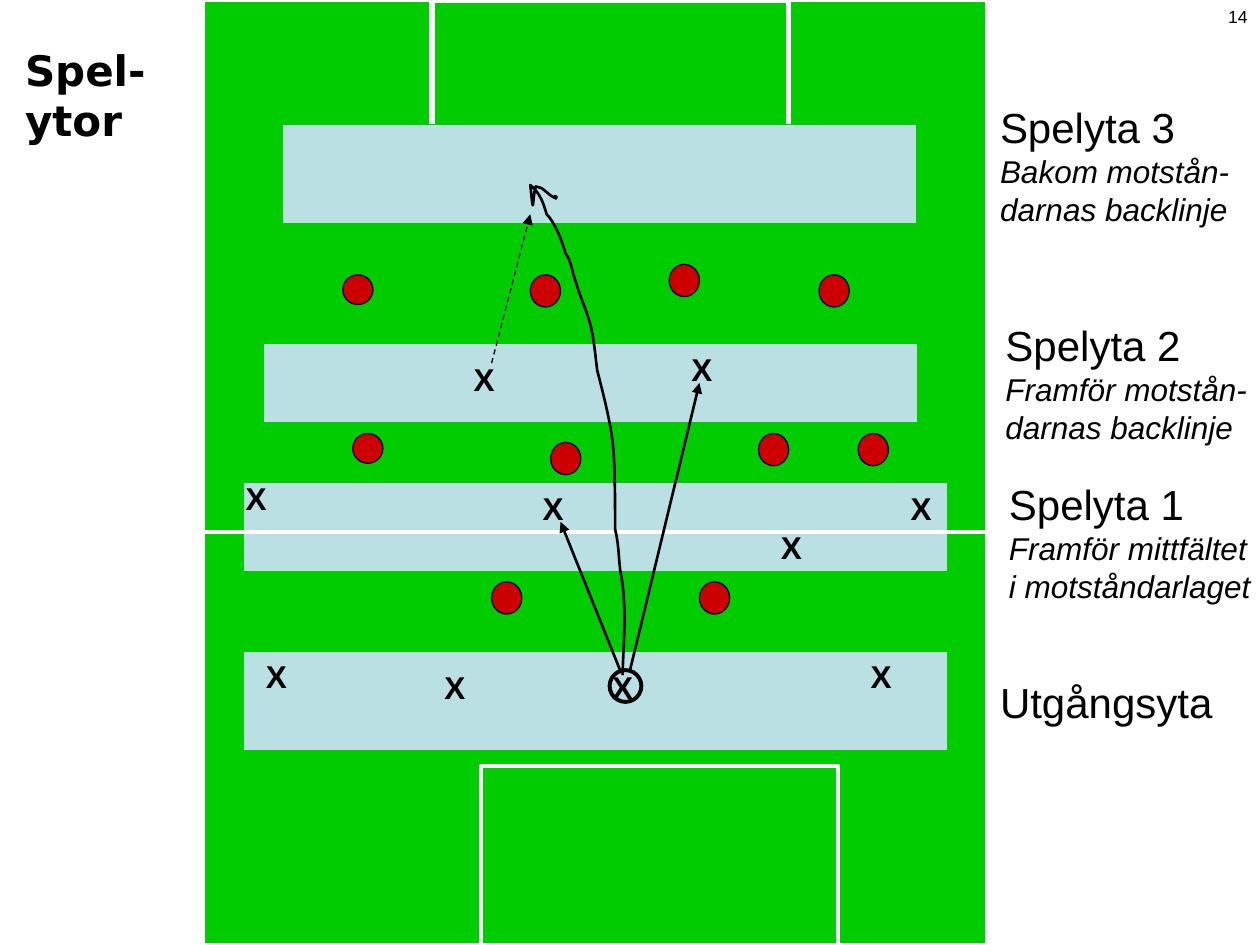
from pptx import Presentation
from pptx.dml.color import RGBColor
from pptx.enum import dml, shapes, text
from pptx.oxml import parse_xml
from pptx.oxml.ns import nsdecls
from pptx.util import Cm, Pt

GREEN, WHITE, BLACK = "00CC00", "FFFFFF", "000000"
BLUE, RED = "BBE0E3", "CC0000"
KIND = shapes.MSO_SHAPE


def color(code):
    return RGBColor.from_string(code)


def write(box, lines, size, face="Arial", bold=False):
    """Fill a text frame; lines after a 24 pt Arial heading become 18 pt italics."""
    frame = box.text_frame
    frame.text = "\n".join(lines)
    frame.word_wrap = False
    frame.auto_size = text.MSO_AUTO_SIZE.NONE
    frame.vertical_anchor = text.MSO_ANCHOR.TOP
    for i, para in enumerate(frame.paragraphs):
        sub = i > 0 and face == "Arial"
        para.alignment = text.PP_ALIGN.LEFT
        para.font.name = face
        para.font.size = Pt(18 if sub else size)
        para.font.bold = bold
        para.font.italic = sub
        para.font.color.rgb = color(BLACK)


prs = Presentation()
prs.slide_width, prs.slide_height = Cm(25.4), Cm(19.05)
slide = prs.slides.add_slide(prs.slide_layouts[5])
tree = slide.shapes

# Title
title = tree.title
title.left, title.top, title.width, title.height = Cm(0.25), Cm(0.76), Cm(2.97), Cm(2.29)
write(title, ["Spel-", "ytor"], 24, "DejaVu Sans", True)

# Pitch, penalty areas, zones, opponents and the ring round the passer
parts = [
    (KIND.RECTANGLE, 4.09, 0, 15.8, 19.05, GREEN, WHITE, 2.25),
    (KIND.RECTANGLE, 8.71, 0, 7.19, 3.81, GREEN, WHITE, 3),
    (KIND.RECTANGLE, 9.7, 15.44, 7.19, 3.61, GREEN, WHITE, 2.25),
]
zones = [(5.69, 2.51, 12.8, 2), (5.3, 6.93, 13.2, 1.6),
         (4.9, 9.73, 14.2, 1.8), (4.9, 13.13, 14.2, 2)]
parts += [(KIND.RECTANGLE, *zone, BLUE, GREEN, 0.75) for zone in zones]
foes = [(6.91, 5.54, 0.6), (10.69, 5.54, 0.65), (13.49, 5.33, 0.65), (16.51, 5.54, 0.65),
        (7.11, 8.74, 0.6), (11.1, 8.92, 0.65), (15.29, 8.74, 0.65), (17.3, 8.74, 0.65),
        (9.91, 11.73, 0.65), (14.1, 11.73, 0.65)]
parts += [(KIND.FLOWCHART_CONNECTOR, x, y, 0.61, h, RED, BLACK, 0.75) for x, y, h in foes]
parts.append((KIND.OVAL, 12.29, 13.51, 0.64, 0.64, None, BLACK, 2.25))

for kind, x, y, w, h, fill, edge, thick in parts:
    part = tree.add_shape(kind, Cm(x), Cm(y), Cm(w), Cm(h))
    part.shadow.inherit = False
    if fill:
        part.fill.solid()
        part.fill.fore_color.rgb = color(fill)
    else:
        part.fill.background()
    part.line.color.rgb = color(edge)
    part.line.width = Pt(thick)

# Halfway line, passes and the dashed run
lines = [
    (4.09, 10.72, 19.9, 10.72, WHITE, 2.25, False, False),
    (12.5, 13.51, 11.3, 10.52, BLACK, 1.5, False, True),
    (12.7, 13.51, 14.1, 7.72, BLACK, 1.5, False, True),
    (9.91, 7.32, 10.69, 4.32, BLACK, 0.75, True, True),
]
for x1, y1, x2, y2, hue, thick, dash, arrow in lines:
    line = tree.add_connector(shapes.MSO_CONNECTOR.STRAIGHT, Cm(x1), Cm(y1), Cm(x2), Cm(y2))
    line.line.color.rgb = color(hue)
    line.line.width = Pt(thick)
    if dash:
        line.line.dash_style = dml.MSO_LINE.DASH
    if arrow:
        line.line._get_or_add_ln().append(
            parse_xml(f'<a:tailEnd {nsdecls("a")} type="triangle"/>'))
    line._element.spPr.append(parse_xml(f'<a:effectLst {nsdecls("a")}/>'))

# Hand-drawn long pass: cubic curves, each given by two controls and an end
start = (12.55, 13.61)
curves = [
    ((12.57, 12.93), (12.65, 12.19), (12.5, 11.48)),
    ((12.47, 11.2), (12.47, 10.95), (12.4, 10.67)),
    ((12.4, 10.16), (12.4, 9.65), (12.37, 9.14)),
    ((12.34, 8.61), (12.17, 7.98), (12.04, 7.47)),
    ((12.01, 7.24), (11.99, 6.99), (11.94, 6.73)),
    ((11.89, 6.38), (11.71, 6.05), (11.61, 5.69)),
    ((11.53, 5.49), (11.53, 5.28), (11.4, 5.11)),
    ((11.35, 4.9), (11.18, 4.47), (11.02, 4.32)),
    ((10.95, 4.09), (10.9, 3.91), (10.69, 3.73)),
    ((10.77, 4.47), (10.72, 4.04), (10.8, 3.76)),
    ((10.97, 3.81), (10.87, 3.76), (11.1, 3.94)),
    ((11.35, 4.11), (11.1, 3.86), (11.23, 3.99)),
]
steps = 8
points, last = [], start
for one, two, end in curves:
    for i in range(1, steps + 1):
        t = i / steps
        s = 1 - t
        points.append([Cm(s**3 * a + 3 * s * s * t * b + 3 * s * t * t * c + t**3 * d)
                       for a, b, c, d in zip(last, one, two, end)])
    last = end
pen = tree.build_freeform(Cm(start[0]), Cm(start[1]))
pen.add_line_segments(points, close=False)
track = pen.convert_to_shape()
track.shadow.inherit = False
track.fill.background()
track.line.color.rgb = color(BLACK)
track.line.width = Pt(1.5)

# Own players
team = [(9.3, 7.14), (13.69, 6.93), (4.7, 9.53), (10.69, 9.73), (18.11, 9.73),
        (15.49, 10.52), (5.11, 13.13), (8.71, 13.34), (12.09, 13.34), (17.3, 13.13)]
for x, y in team:
    write(tree.add_textbox(Cm(x), Cm(y), Cm(0.94), Cm(1.02)), ["X"], 18, bold=True)

# Zone labels and page number
labels = [
    (19.91, 1.93, 5.13, 2.79, 24, ["Spelyta 3", "Bakom motstån-", "darnas backlinje"]),
    (20.02, 6.32, 5.38, 2.79, 24, ["Spelyta 2", "Framför motstån-", "darnas backlinje"]),
    (20.09, 9.53, 5.38, 2.79, 24, ["Spelyta 1", "Framför mittfältet", "i motståndarlaget"]),
    (19.91, 13.51, 4.8, 1.27, 24, ["Utgångsyta"]),
    (24.51, 0, 0.89, 0.69, 10, ["14"]),
]
for x, y, w, h, size, words in labels:
    write(tree.add_textbox(Cm(x), Cm(y), Cm(w), Cm(h)), words, size)

prs.save("out.pptx")
